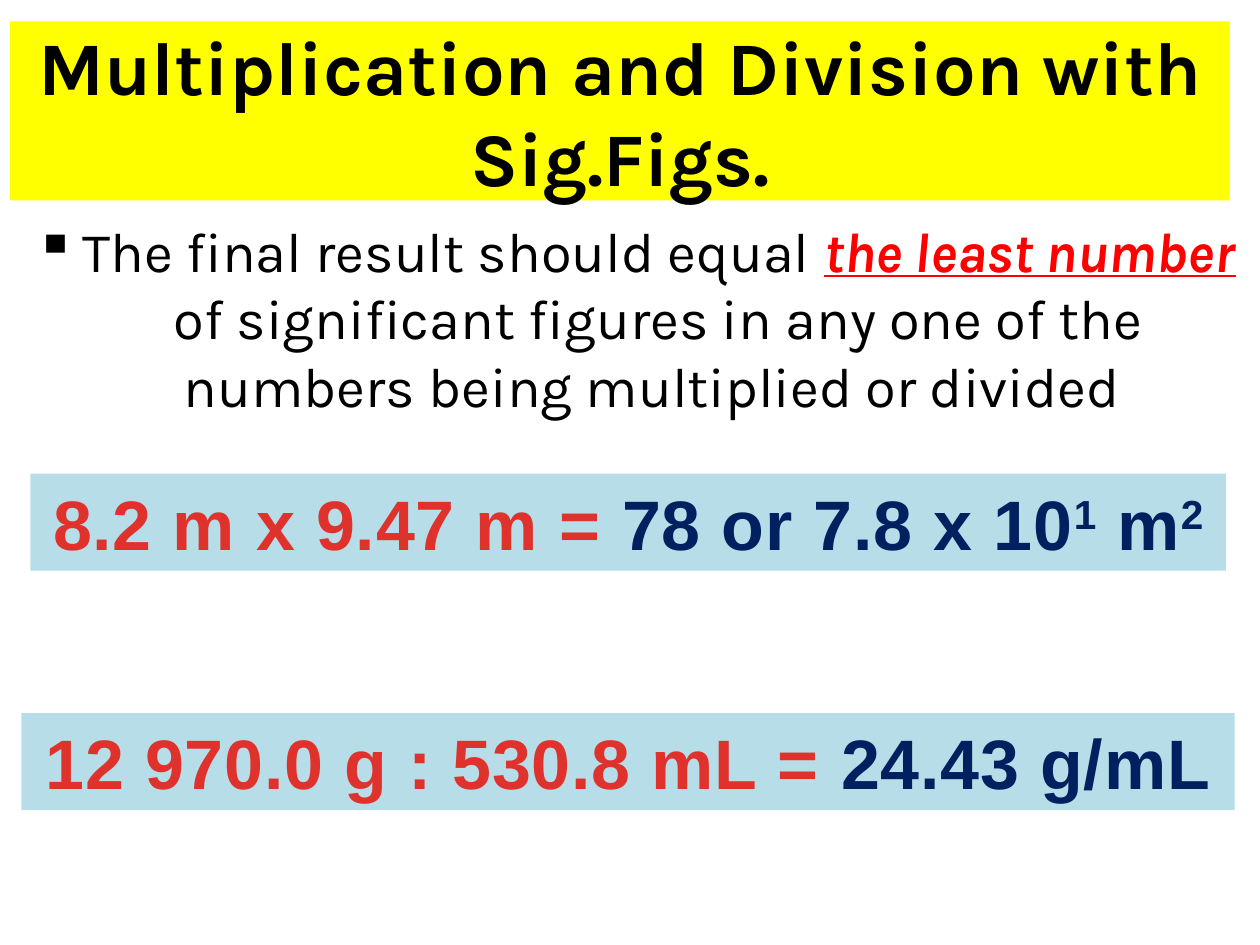
from lxml.etree import SubElement
from pptx import Presentation
from pptx.dml.color import RGBColor
from pptx.enum.shapes import MSO_SHAPE as Shape
from pptx.enum.text import MSO_ANCHOR as Anchor, PP_ALIGN as Align
from pptx.oxml.ns import qn
from pptx.util import Inches, Pt

COLORS = {
    "title": "FFFF00", "panel": "B7DEE8", "ink": "000000",
    "stress": "FF0000", "problem": "E0322D", "answer": "002060",
}
TITLE = {"name": "Karla", "size": Pt(43.2), "bold": True}
RULE = {"name": "Karla", "size": Pt(32)}
STRESS = {**RULE, "bold": True, "italic": True, "underline": True}
EQUATION = {"name": "Arial", "size": Pt(40), "bold": True}


def color(key):
    """Look up a palette colour."""
    return RGBColor.from_string(COLORS[key])


def add_run(paragraph, text, style, ink, **attributes):
    """Append a run with its font values and raw run attributes."""
    run = paragraph.add_run()
    run.text = text
    for key, value in style.items():
        setattr(run.font, key, value)
    run.font.color.rgb = color(ink)
    for key, value in attributes.items():
        run.font._element.set(key, value)


def add_band(slide, box, fill, wrap=True):
    """Draw a filled band and return its centred paragraph."""
    band = slide.shapes.add_shape(Shape.RECTANGLE, *map(Inches, box))
    band.shadow.inherit = False
    band.fill.solid()
    band.fill.fore_color.rgb = color(fill)
    band.line.fill.background()
    frame = band.text_frame
    frame.word_wrap = wrap
    frame.vertical_anchor = Anchor.MIDDLE
    paragraph = frame.paragraphs[0]
    paragraph.alignment = Align.CENTER
    return paragraph


def add_title(slide, box):
    """Place the heading on its band."""
    heading = add_band(slide, box, "title")
    add_run(heading, "Multiplication and Division with Sig.Figs.", TITLE, "ink")


def add_rule(slide, box):
    """Place the bulleted rule with its stressed words."""
    frame = slide.shapes.add_textbox(*map(Inches, box)).text_frame
    frame.word_wrap = True
    rule = frame.paragraphs[0]
    rule.alignment = Align.CENTER
    rule.space_before = Pt(6.4)
    properties = rule._p.get_or_add_pPr()
    properties.set("marL", str(Inches(0.38)))
    properties.set("indent", str(Inches(-0.38)))
    SubElement(properties, qn("a:buChar")).set("char", "▪")
    add_run(rule, "The final result should equal ", RULE, "ink")
    add_run(rule, "the least number ", STRESS, "stress")
    add_run(rule, "of significant figures in any one of the numbers "
            "being multiplied or divided ", RULE, "ink")


def add_equation(slide, box, problem, answer, wrap=True):
    """Place a problem and its answer, whose odd parts are superscripts."""
    equation = add_band(slide, box, "panel", wrap)
    add_run(equation, problem, EQUATION, "problem", spc="50")
    for index, part in enumerate(answer):
        raised = {"baseline": "30000"} if index % 2 else {}
        add_run(equation, part, EQUATION, "answer", spc="50", **raised)


def main():
    """Build and save the slide."""
    deck = Presentation()
    deck.slide_width, deck.slide_height = Inches(10), Inches(7.5)
    slide = deck.slides.add_slide(deck.slide_layouts[6])
    add_rule(slide, (0.08, 1.67, 9.92, 1.83))
    add_title(slide, (0.08, 0.17, 9.68, 1.42))
    add_equation(slide, (0.24, 3.76, 9.49, 0.77), "8.2 m x 9.47 m = ",
                 ("78 or 7.8 x 10", "1", " m", "2"), wrap=False)
    add_equation(slide, (0.17, 5.66, 9.63, 0.77), "12 970.0 g : 530.8 mL = ",
                 ("24.43 g/mL",))
    deck.save("out.pptx")


if __name__ == "__main__":
    main()
